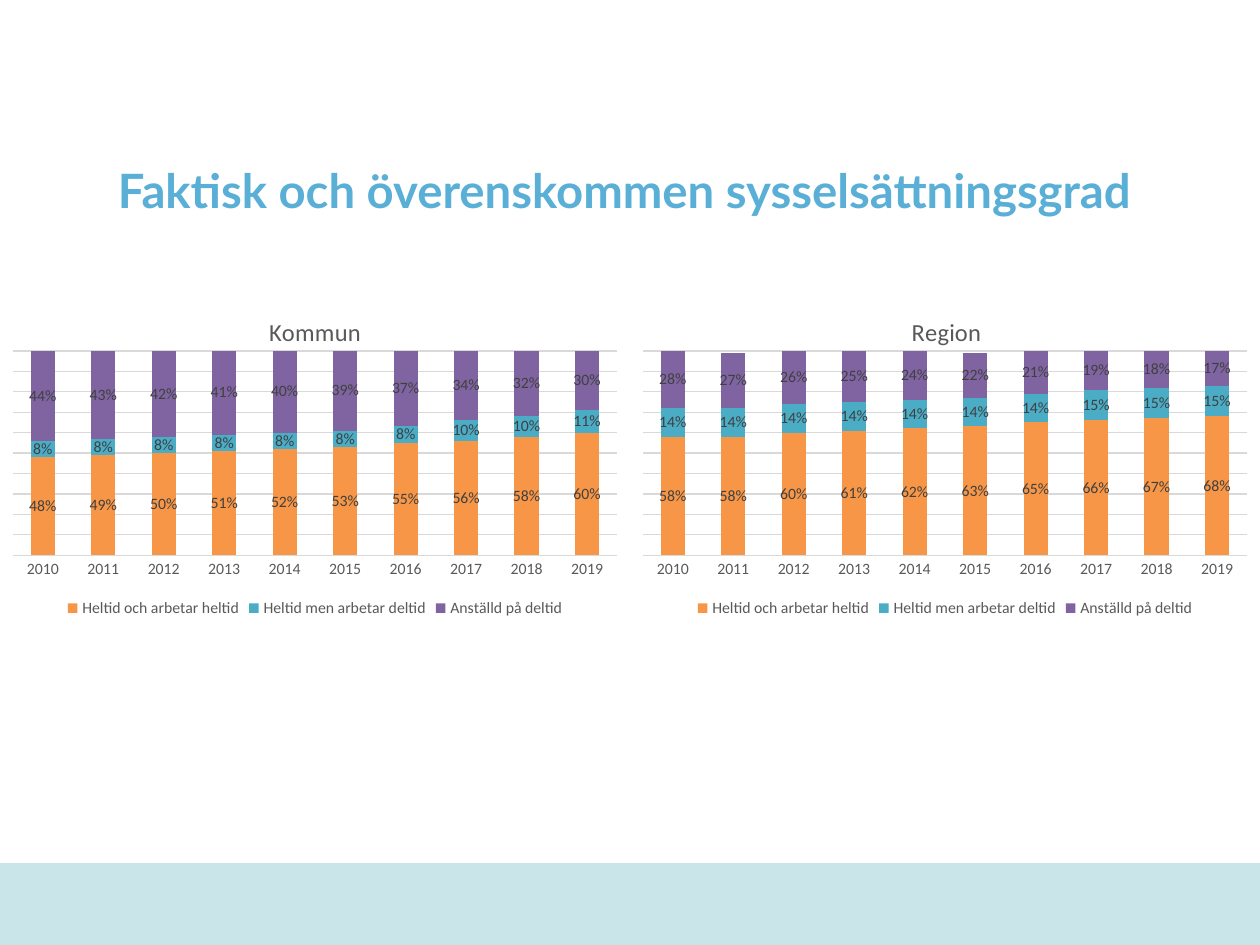
from dataclasses import dataclass

from lxml import etree
from pptx import Presentation
from pptx.chart.data import CategoryChartData
from pptx.dml.color import RGBColor
from pptx.enum.chart import XL_CHART_TYPE as ChartType
from pptx.enum.chart import XL_LABEL_POSITION as LabelPosition
from pptx.enum.chart import XL_LEGEND_POSITION as LegendPosition
from pptx.enum.chart import XL_TICK_MARK as TickMark
from pptx.enum.shapes import MSO_SHAPE as ShapeType
from pptx.enum.text import MSO_ANCHOR as Anchor
from pptx.enum.text import PP_ALIGN as Align
from pptx.oxml.ns import qn
from pptx.util import Inches, Pt

COLORS = {
    "title": "5AAFD7",
    "footer": "CAE5EA",
    "text": "595959",
    "label": "404040",
    "grid": "D9D9D9",
    "base": "000000",
}
SERIES_COLORS = {
    "Heltid och arbetar heltid": "F79646",
    "Heltid men arbetar deltid": "4BACC6",
    "Anställd på deltid": "8064A2",
}
YEARS = [str(year) for year in range(2010, 2020)]


@dataclass
class EmploymentChart:
    title: str
    left: float
    title_x: float
    percentages: list[list[int]]


CHARTS = [
    EmploymentChart("Kommun", 0, 0.42, [
        [48, 49, 50, 51, 52, 53, 55, 56, 58, 60],
        [8, 8, 8, 8, 8, 8, 8, 10, 10, 11],
        [44, 43, 42, 41, 40, 39, 37, 34, 32, 30],
    ]),
    EmploymentChart("Region", 5, 0.44, [
        [58, 58, 60, 61, 62, 63, 65, 66, 67, 68],
        [14, 14, 14, 14, 14, 14, 14, 15, 15, 15],
        [28, 27, 26, 25, 24, 22, 21, 19, 18, 17],
    ]),
]


def color(name: str) -> RGBColor:
    return RGBColor.from_string(COLORS[name])


def style_font(font, size: float, color_name: str, name: str = "Calibri", bold: bool = False) -> None:
    font.name = name
    font.size = Pt(size)
    font.bold = bold
    font.color.rgb = color(color_name)


def style_line(line) -> None:
    line.color.rgb = color("grid")
    line.width = Pt(0.75)


def set_layout(element, index: int, **settings) -> None:
    for existing in element.findall(qn("c:layout")):
        element.remove(existing)
    layout = etree.Element(qn("c:layout"))
    manual = etree.SubElement(layout, qn("c:manualLayout"))
    for tag, value in settings.items():
        etree.SubElement(manual, qn(f"c:{tag}")).set("val", str(value))
    element.insert(index, layout)


def add_title(slide) -> None:
    box = slide.shapes.add_textbox(Inches(0.5), Inches(0.88), Inches(9), Inches(1.25))
    text_frame = box.text_frame
    text_frame.word_wrap = True
    text_frame.vertical_anchor = Anchor.MIDDLE
    text_frame.text = "Faktisk och överenskommen sysselsättningsgrad "
    paragraph = text_frame.paragraphs[0]
    paragraph.alignment = Align.CENTER
    style_font(paragraph.runs[0].font, 27, "title", "Lato", True)


def add_footer(slide) -> None:
    shape = slide.shapes.add_shape(ShapeType.RECTANGLE, 0, Inches(6.85), Inches(10), Inches(0.65))
    shape.shadow.inherit = False
    shape.fill.solid()
    shape.fill.fore_color.rgb = color("footer")
    shape.line.fill.background()


def add_employment_chart(slide, item: EmploymentChart) -> None:
    data = CategoryChartData(number_format="0%")
    data.categories = YEARS
    for name, values in zip(SERIES_COLORS, item.percentages):
        data.add_series(name, [value / 100 for value in values])
    chart = slide.shapes.add_chart(
        ChartType.COLUMN_STACKED, Inches(item.left), Inches(2.28), Inches(5), Inches(2.66), data
    ).chart
    style_font(chart.font, 10, "base")

    chart.has_title = True
    title = chart.chart_title
    title.include_in_layout = False
    title.text_frame.text = item.title
    style_font(title.text_frame.paragraphs[0].runs[0].font, 14, "text")
    set_layout(title._element, 1, xMode="edge", yMode="edge", x=item.title_x, y=0.07)
    plot_area = chart._chartSpace.chart.plotArea
    set_layout(plot_area, 0, layoutTarget="inner", xMode="edge", yMode="edge",
               x=0.02, y=0.19, w=0.96, h=0.61)

    chart.has_legend = True
    chart.legend.position = LegendPosition.BOTTOM
    chart.legend.include_in_layout = False
    style_font(chart.legend.font, 9, "text")

    category_axis = chart.category_axis
    category_axis.major_tick_mark = TickMark.NONE
    style_font(category_axis.tick_labels.font, 9, "text")
    style_line(category_axis.format.line)
    value_axis = chart.value_axis
    value_axis.visible = False
    value_axis.minimum_scale = 0
    value_axis.maximum_scale = 1
    value_axis.major_unit = 0.1
    value_axis.has_major_gridlines = True
    style_line(value_axis.major_gridlines.format.line)

    plot = chart.plots[0]
    plot.gap_width = 150
    plot.overlap = 100
    plot.vary_by_categories = False
    for series in plot.series:
        series.format.fill.solid()
        series.format.fill.fore_color.rgb = RGBColor.from_string(SERIES_COLORS[series.name])
        labels = series.data_labels
        labels.show_value = True
        labels.position = LabelPosition.CENTER
        style_font(labels.font, 9, "label")


def main() -> None:
    presentation = Presentation()
    presentation.slide_width = Inches(10)
    presentation.slide_height = Inches(7.5)
    slide = presentation.slides.add_slide(presentation.slide_layouts[6])
    add_title(slide)
    add_footer(slide)
    for item in CHARTS:
        add_employment_chart(slide, item)
    presentation.save("out.pptx")


if __name__ == "__main__":
    main()
